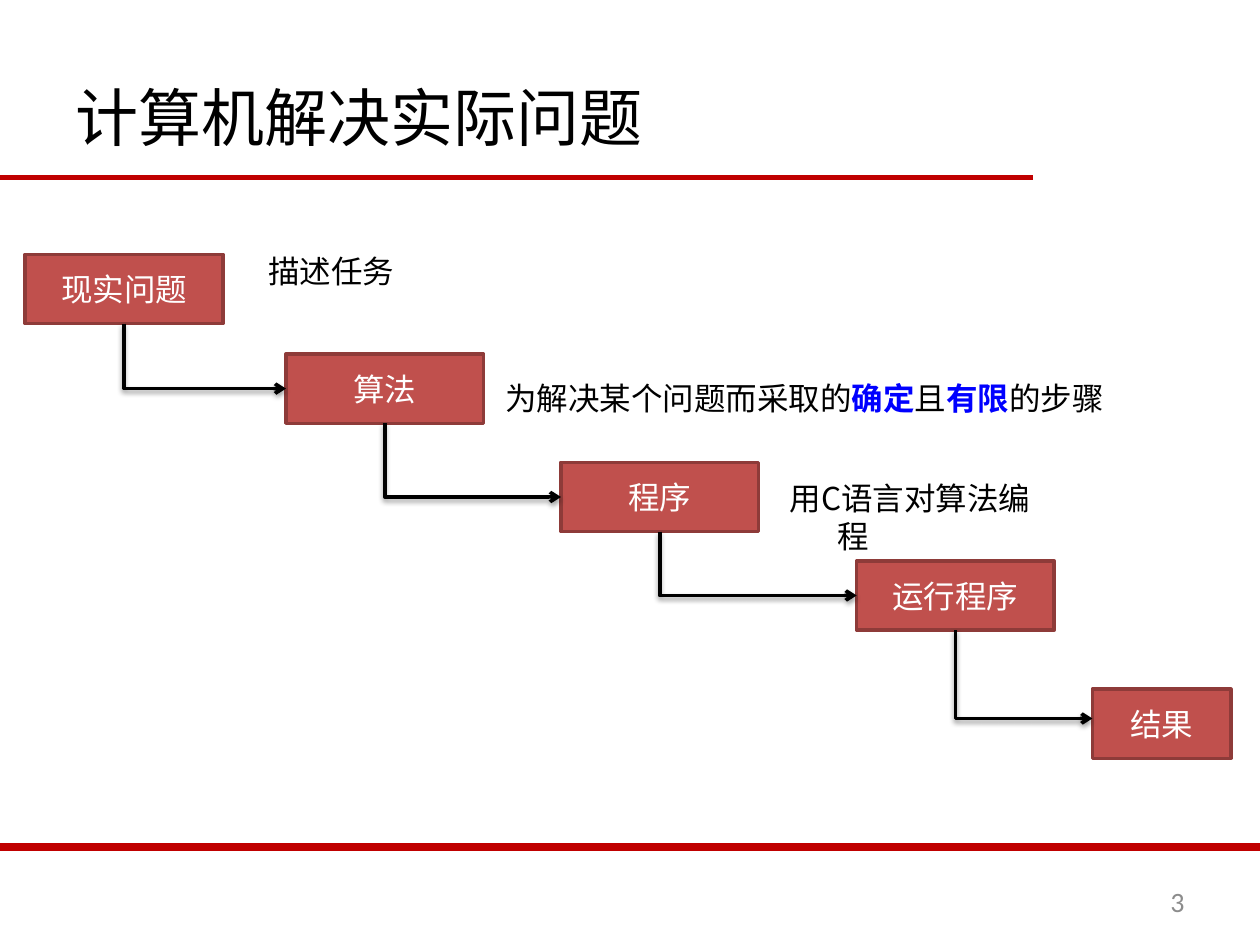
from lxml import etree
from pptx import Presentation
from pptx.dml.color import RGBColor
from pptx.enum.shapes import MSO_CONNECTOR, MSO_SHAPE
from pptx.enum.text import MSO_ANCHOR, MSO_AUTO_SIZE, PP_ALIGN
from pptx.oxml import parse_xml
from pptx.oxml.ns import nsdecls, qn
from pptx.util import Pt

STRAIGHT, ELBOW = MSO_CONNECTOR.STRAIGHT, MSO_CONNECTOR.ELBOW
RECT = MSO_SHAPE.RECTANGLE
MIDDLE, TOP = MSO_ANCHOR.MIDDLE, MSO_ANCHOR.TOP
LEFT, CENTER, RIGHT = PP_ALIGN.LEFT, PP_ALIGN.CENTER, PP_ALIGN.RIGHT
NO_FIT, FIT_SHAPE = MSO_AUTO_SIZE.NONE, MSO_AUTO_SIZE.SHAPE_TO_FIT_TEXT

CJK = "Noto Sans CJK SC"
BLACK, WHITE, BLUE, GREY = "000000", "FFFFFF", "0000FF", "8C8C8C"
RULE_RED, BOX_RED, EDGE_RED = "C00000", "C0504D", "8E3B39"
BOX_H = 39.6
HANGING = 27

# text, left, top, width, height at which the arrow enters
STEPS = [
    ("现实问题", 14.4, 145.3, 113, 19.8),
    ("算法", 163.4, 202.3, 113, 19.8),
    ("程序", 320.5, 264.2, 113, 19.8),
    ("运行程序", 489.5, 320.5, 113, 19.8),
    ("结果", 624.2, 393.8, 79.2, 16.8),
]
NOTES = [
    ([("描述任务", BLACK)], (146.2, 140.4, 87.1, 29.1), HANGING),
    ([("为解决某个问题而采取的", BLACK), ("确定", BLUE), ("且", BLACK),
      ("有限", BLUE), ("的步骤", BLACK)], (281.5, 213.1, 360.7, 29.1), 0),
    ([("用C语言对算法编程", BLACK)], (444.2, 270, 169.2, 29.1), HANGING),
]


def rgb(value):
    """Turn a hex string into a colour."""
    return RGBColor.from_string(value)


def set_all(target, values):
    """Set the attributes of an object from a dict."""
    for name, value in values.items():
        setattr(target, name, value)


def place(sp, box):
    """Put a shape at left, top, width and height in points."""
    set_all(sp, dict(zip(("left", "top", "width", "height"), map(Pt, box))))


def write(sp, runs, size=18, font=CJK, align=LEFT, **frame):
    """Write one paragraph of (text, colour) runs and return it."""
    tf = sp.text_frame
    set_all(tf, {"word_wrap": True, "auto_size": NO_FIT, **frame})
    p = tf.paragraphs[0]
    p.alignment = align
    for text, color in runs:
        r = p.add_run()
        r.text = text
        set_all(r.font, {"name": font, "size": Pt(size), "bold": color == BLUE})
        r.font.color.rgb = rgb(color)
        ea = etree.SubElement(r.font._element, qn("a:ea"))
        ea.set("typeface", font)
    return p


def add_line(s, kind, start, end, color, width, effect=""):
    """Add a connector with the given effect and return it."""
    c = s.shapes.add_connector(kind, *map(Pt, start + end))
    c.line.color.rgb = rgb(color)
    c.line.width = Pt(width)
    c._element.spPr.append(
        parse_xml(f'<a:effectLst {nsdecls("a")}>{effect}</a:effectLst>'))
    return c


def add_step(s, text, left, top, width):
    """Add one red step box."""
    sp = s.shapes.add_shape(RECT, *map(Pt, (left, top, width, BOX_H)))
    sp.shadow.inherit = False
    sp.fill.solid()
    sp.fill.fore_color.rgb = rgb(BOX_RED)
    sp.line.color.rgb = rgb(EDGE_RED)
    sp.line.width = Pt(2)
    write(sp, [(text, WHITE)], align=CENTER, vertical_anchor=MIDDLE)


def add_arrow(s, step, following):
    """Lead down from a step, then right into the following one."""
    x1, y1 = step[1] + step[3] / 2, step[2] + BOX_H
    x2, y2 = following[1], following[2] + following[4]
    mid_x, mid_y = (x1 + x2) / 2, (y1 + y2) / 2
    half_w, half_h = (y2 - y1) / 2, (x2 - x1) / 2
    shadow = (f'<a:outerShdw blurRad="{Pt(3.1)}" dist="{Pt(1.6)}" dir="5400000" '
              'rotWithShape="0"><a:srgbClr val="000000"><a:alpha val="38000"/>'
              '</a:srgbClr></a:outerShdw>')
    c = add_line(s, ELBOW, (mid_x + half_w, mid_y - half_h),
                 (mid_x - half_w, mid_y + half_h), BLACK, 2, shadow)
    props = c._element.spPr
    props.find(qn("a:xfrm")).set("rot", "16200000")
    props.find(qn("a:prstGeom")).set("prst", "bentConnector2")
    etree.SubElement(props.find(qn("a:ln")), qn("a:tailEnd")).set("type", "arrow")


def add_text(s, runs, box, indent=0, **style):
    """Add a text box with an optional hanging indent."""
    sp = s.shapes.add_textbox(*map(Pt, box))
    p = write(sp, runs, **style)
    if indent:
        props = p._p.get_or_add_pPr()
        props.set("marL", str(Pt(indent)))
        props.set("indent", str(Pt(-indent)))


def main():
    """Build the slide and save it."""
    prs = Presentation()
    prs.slide_width, prs.slide_height = Pt(720), Pt(540)
    s = prs.slides.add_slide(prs.slide_layouts[5])
    add_line(s, STRAIGHT, (0, 101.5), (590.5, 101.5), RULE_RED, 3)
    add_line(s, STRAIGHT, (0, 483.8), (720, 483.8), RULE_RED, 4.5)
    title = s.shapes.title
    place(title, (36, 21.6, 648, 90))
    write(title, [("计算机解决实际问题", BLACK)], size=36, vertical_anchor=MIDDLE)
    add_text(s, [("3", GREY)], (516, 500.5, 168, 28.8), size=16, font="Calibri",
             align=RIGHT, vertical_anchor=MIDDLE)
    for step in STEPS:
        add_step(s, *step[:4])
    for step, following in zip(STEPS, STEPS[1:]):
        add_arrow(s, step, following)
    for runs, box, indent in NOTES:
        add_text(s, runs, box, indent, word_wrap=False, auto_size=FIT_SHAPE,
                 vertical_anchor=TOP)
    prs.save("out.pptx")


if __name__ == "__main__":
    main()
